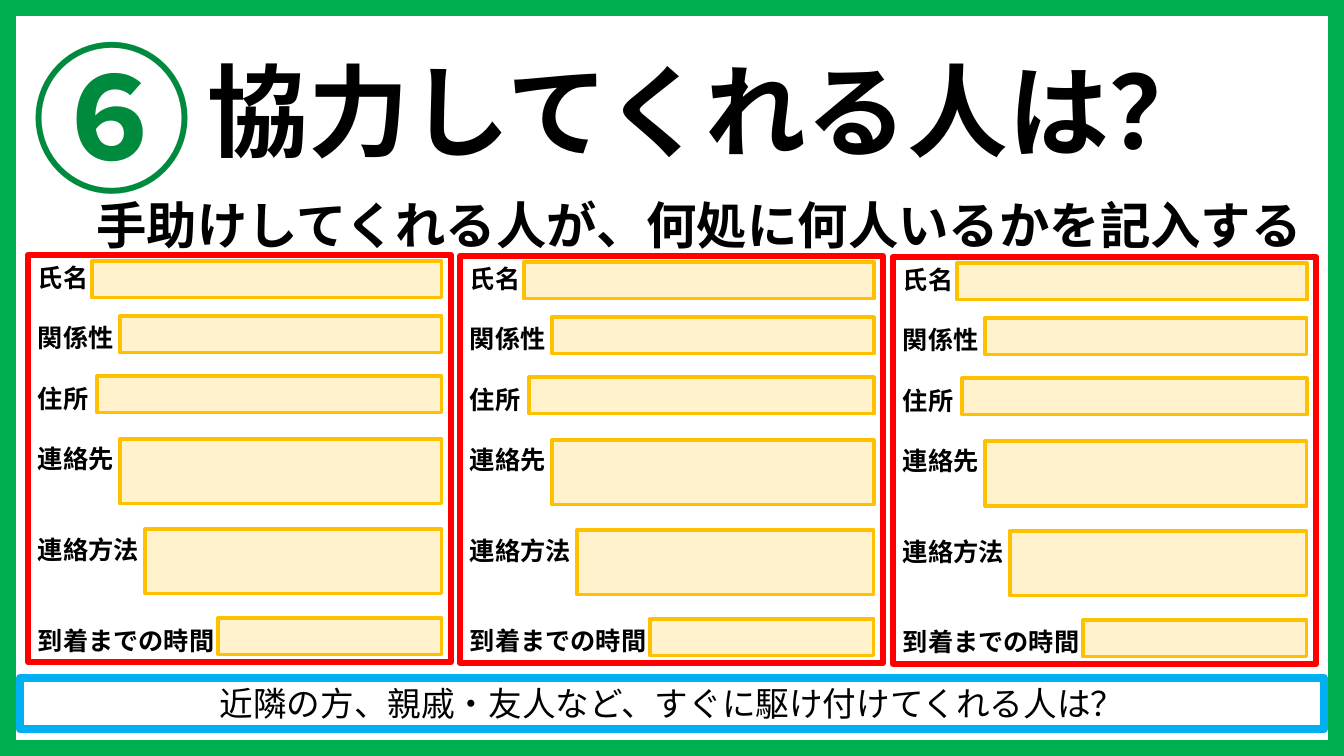
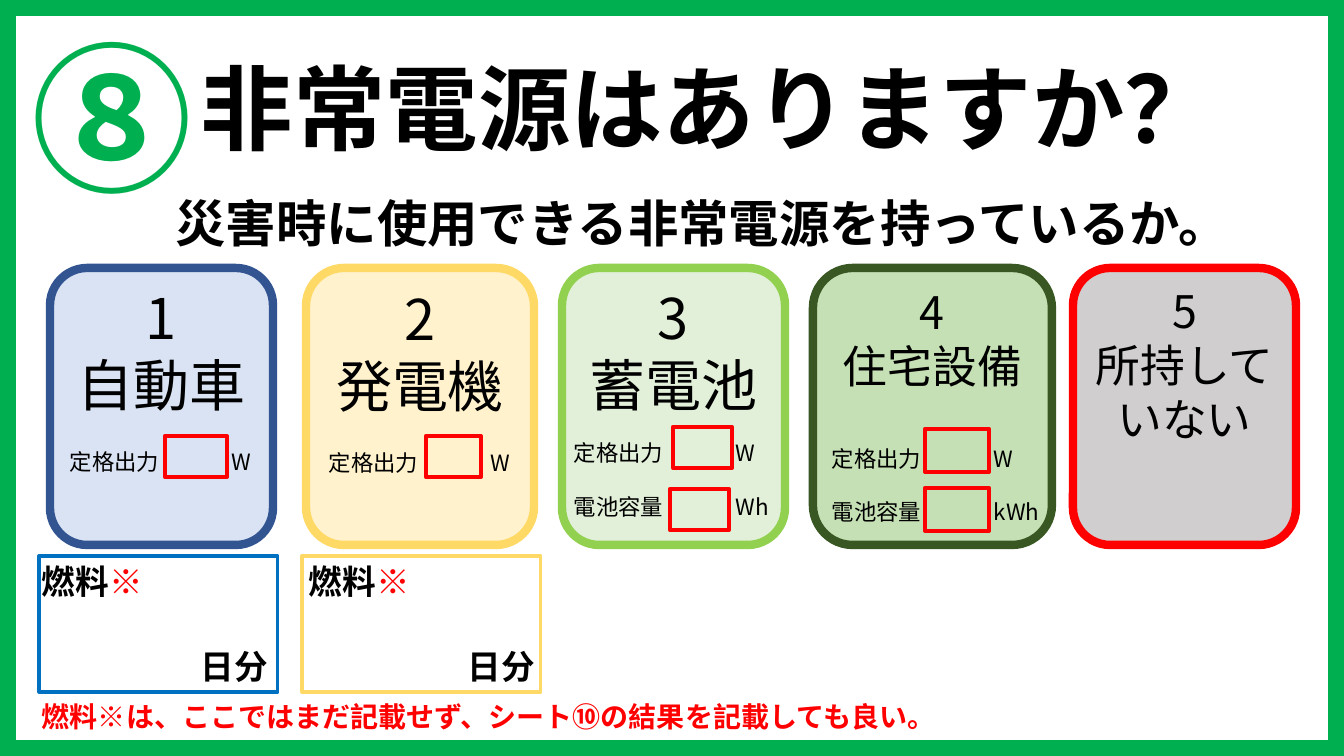
from lxml import etree
from pptx import Presentation
from pptx import util as u
from pptx.dml import color as dml
from pptx.enum import shapes as kinds, text as txt
from pptx.oxml import ns

# Shared style
FONT = "Noto Sans CJK JP"
GREEN, BLACK, RED, WHITE = "00B050", "000000", "FF0000", "FFFFFF"
CREAM, AMBER, YELLOW = "FFF2CC", "FFC000", "FFD966"
LINE_HEIGHT = 1.2
WIDTH, HEIGHT = 1344, 756
EMU_PER_PX = 914400 / 100.8
MIDDLE, TOP = txt.MSO_ANCHOR.MIDDLE, txt.MSO_ANCHOR.TOP
CENTER, LEFT = txt.PP_ALIGN.CENTER, txt.PP_ALIGN.LEFT
RECT = kinds.MSO_SHAPE.RECTANGLE
ROUNDED = kinds.MSO_SHAPE.ROUNDED_RECTANGLE
FRAME = kinds.MSO_SHAPE.FRAME

# Slide 1 content: helper forms
HELPERS = {
    "number": "⑥", "number_color": "008A3E",
    "title": "協力してくれる人は？", "title_size": 72, "title_box": (198, 43, 1051, 132),
    "lead": "手助けしてくれる人が、何処に何人いるかを記入する", "lead_box": (81, 188, 1236, 72),
}
QUESTION = "近隣の方、親戚・友人など、すぐに駆け付けてくれる人は？"
FORM_ORIGINS = [(28, 255), (460, 256), (893, 257)]
FORM_WIDTH, FORM_HEIGHT, FIELD_RIGHT = 423, 407, 414
# label, empty lines above it, field left, top and height within the form
FIELDS = [
    ("氏名", 0, 64, 6, 37),
    ("関係性", 1, 92, 61, 37),
    ("住所", 1, 69, 121, 37),
    ("連絡先", 1, 92, 184, 65),
    ("連絡方法", 2, 117, 274, 65),
    ("到着までの時間", 2, 190, 363, 37),
]

# Slide 2 content: emergency power
POWER = {
    "number": "⑧", "number_color": GREEN,
    "title": "非常電源はありますか？", "title_size": 66, "title_box": (191, 46, 1135, 122),
    "lead": "災害時に使用できる非常電源を持っているか。", "lead_box": (40, 186, 1325, 72),
}
# number, name, text size, left, width, fill, line
SOURCES = [
    ("1", "自動車", 40, 50, 223, "DAE3F3", "325491"),
    ("2", "発電機", 40, 306, 228, CREAM, YELLOW),
    ("3", "蓄電池", 40, 562, 223, "E2F0D9", "92D050"),
    ("4", "住宅設備", 32, 813, 239, "C5E0B4", "385723"),
    ("5", "所持していない", 32, 1073, 223, "D0CECE", RED),
]
# label, label left, text middle, unit, unit left, entry box
RATINGS = [
    ("定格出力", 70, 462, "W", 232, (165, 436, 62, 41)),
    ("定格出力", 329, 463, "W", 491, (426, 436, 55, 41)),
    ("定格出力", 574, 453, "W", 736, (673, 427, 59, 41)),
    ("電池容量", 574, 507, "Wh", 736, (670, 489, 59, 41)),
    ("定格出力", 832, 459, "W", 994, (925, 429, 64, 43)),
    ("電池容量", 832, 512, "kWh", 994, (925, 488, 64, 43)),
]
# frame left, fuel label left, days label left, line
FUELS = [(39, 42, 201, "0070C0"), (302, 309, 468, YELLOW)]
NOTE = "燃料※は、ここではまだ記載せず、シート⑩の結果を記載しても良い。"


def px(length):
    return u.Emu(round(length * EMU_PER_PX))


def rgb(value):
    return dml.RGBColor.from_string(value)


def write(box, paras, size=18, color=BLACK, bold=False, align=LEFT,
          anchor=MIDDLE, inset=None, gaps=None):
    """Fill a box; a paragraph is a string or a list of (text, color, bold)."""
    frame = box.text_frame
    frame.word_wrap = True
    frame.vertical_anchor = anchor
    if inset is not None:
        frame.margin_left = frame.margin_right = px(inset)
        frame.margin_top = frame.margin_bottom = 0
    for index, content in enumerate(paras):
        para = frame.paragraphs[0] if index == 0 else frame.add_paragraph()
        para.alignment = align
        para.line_spacing = u.Pt(size * LINE_HEIGHT)
        if gaps:
            para.space_before = u.Pt(gaps[index] * size * LINE_HEIGHT)
        spans = [(content, color, bold)] if isinstance(content, str) else content
        for words, ink, heavy in spans:
            span = para.add_run()
            span.text = words
            span.font.size = u.Pt(size)
            span.font.bold = heavy
            span.font.color.rgb = rgb(ink)
            span.font.name = FONT
            east_asian = etree.SubElement(span._r.get_or_add_rPr(), ns.qn("a:ea"))
            east_asian.set("typeface", FONT)


def add_text(owner, area, paras, **style):
    box = owner.shapes.add_textbox(*map(px, area))
    write(box, paras, **style)


def add_box(owner, area, line, weight, fill=None, kind=RECT):
    box = owner.shapes.add_shape(kind, *map(px, area))
    box.shadow.inherit = False
    box.line.color.rgb = rgb(line)
    box.line.width = u.Pt(weight)
    if fill:
        box.fill.solid()
        box.fill.fore_color.rgb = rgb(fill)
    else:
        box.fill.background()
    return box


def add_page(deck, head):
    """Add a page with its number, green frame, title and lead."""
    page = deck.slides.add_slide(deck.slide_layouts[6])
    page.background.fill.solid()
    page.background.fill.fore_color.rgb = rgb(WHITE)
    add_text(page, (-4, 12, 231, 206), [head["number"]], size=115,
             color=head["number_color"], bold=True, align=CENTER)
    border = add_box(page, (0, 0, WIDTH, HEIGHT), GREEN, 1, GREEN, FRAME)
    border.adjustments[0] = 0.02
    add_text(page, head["lead_box"], [head["lead"]], size=36, bold=True, align=CENTER)
    add_text(page, head["title_box"], [head["title"]], size=head["title_size"], bold=True)
    return page


def build_helpers(deck):
    page = add_page(deck, HELPERS)
    bar = add_box(page, (20, 678, 1304, 51), "00B0F0", 6)
    write(bar, [QUESTION], size=24, align=CENTER)
    for left, top in FORM_ORIGINS:
        form = add_box(page, (left, top, FORM_WIDTH, FORM_HEIGHT), RED, 4.5)
        write(form, [field[0] for field in FIELDS], bold=True,
              gaps=[field[1] for field in FIELDS])
        for _, _, x, y, height in FIELDS:
            add_box(page, (left + x, top + y, FIELD_RIGHT - x, height), AMBER, 2.25, CREAM)


def build_power(deck):
    page = add_page(deck, POWER)
    # Source cards
    for number, name, size, left, width, fill, line in SOURCES:
        card = add_box(page, (left, 268, width, 277), line, 6, fill, ROUNDED)
        write(card, [number, name], size=size, align=CENTER, anchor=TOP)
    # Ratings with their entry boxes
    for label, label_left, middle, unit, unit_left, entry in RATINGS:
        for words, left in ((label, label_left), (unit, unit_left)):
            add_text(page, (left, middle - 15, 95, 30), [words], size=16, inset=0)
        add_box(page, entry, RED, 3)
    # Fuel frames
    for left, fuel_left, days_left, line in FUELS:
        group = page.shapes.add_group_shape()
        add_text(group, (fuel_left, 556, 120, 50),
                 [[("燃料", BLACK, True), ("※", RED, True)]], size=24, inset=0)
        add_text(group, (days_left, 641, 75, 50), ["日分"], size=24, bold=True, inset=0)
        add_box(group, (left, 556, 239, 136), line, 2.25)
    add_text(page, (32, 694, 1119, 45), [NOTE], size=20, color=RED, bold=True)


def main():
    deck = Presentation()
    deck.slide_width, deck.slide_height = px(WIDTH), px(HEIGHT)
    build_helpers(deck)
    build_power(deck)
    deck.save("out.pptx")


if __name__ == "__main__":
    main()
